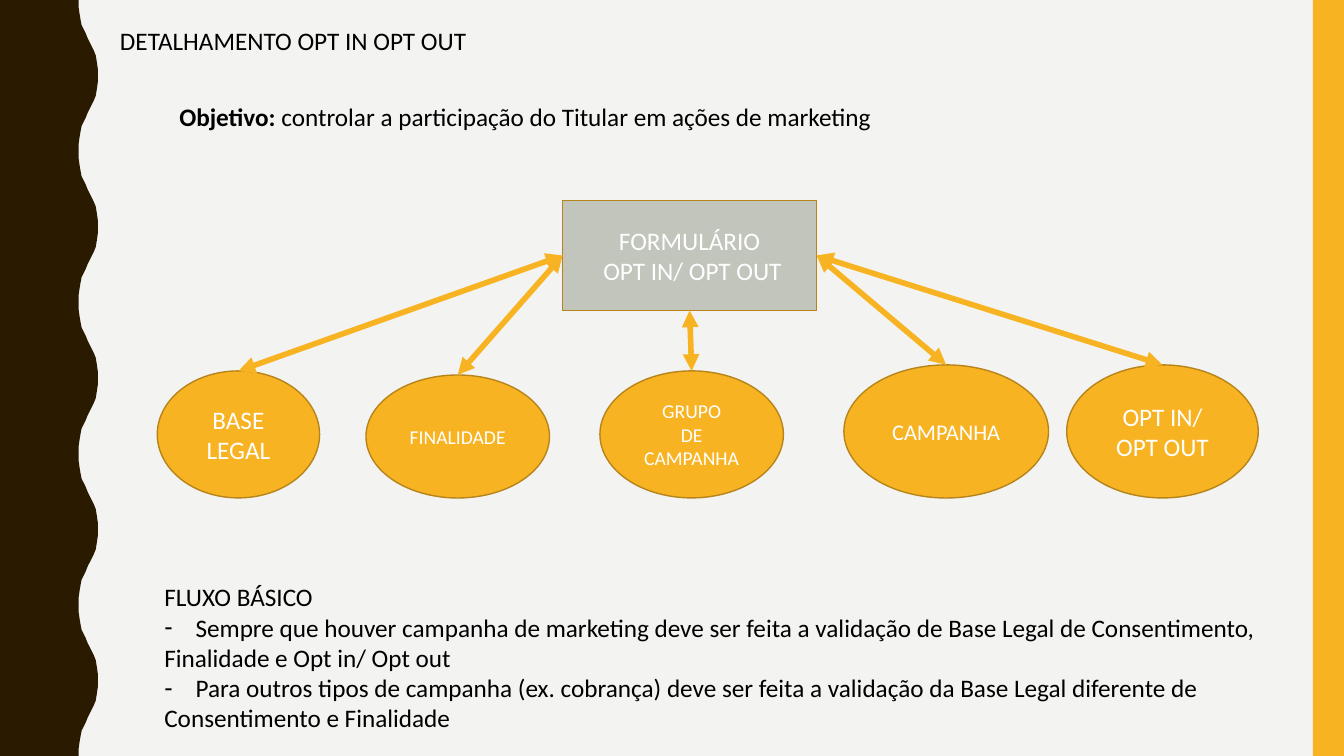
from lxml.etree import SubElement
from pptx import Presentation
from pptx.dml.color import RGBColor
from pptx.enum.shapes import MSO_CONNECTOR, MSO_SHAPE
from pptx.enum.text import MSO_ANCHOR, MSO_AUTO_SIZE, PP_ALIGN
from pptx.oxml.ns import qn
from pptx.util import Inches, Pt

AMBER, BROWN, GREY, OUTLINE = "F8B323", "2A1A00", "C2C5BB", "B7841A"
PAPER, BLACK, WHITE = "F3F3F2", "000000", "FFFFFF"
TOP, LEFT, BOTTOM, RIGHT_OF_BOX = 0, 1, 2, 3
WAVE_PERIOD = 1.5
HALF_WAVE = [
    (0.78, 0), (0.78, 0.07), (0.79, 0.14), (0.8, 0.2), (0.81, 0.25),
    (0.83, 0.29), (0.85, 0.33), (0.87, 0.38), (0.89, 0.42), (0.91, 0.46),
    (0.93, 0.5), (0.95, 0.55), (0.96, 0.61), (0.97, 0.68), (0.97, 0.75),
]
TOPICS = [
    ((1.56, 3.68, 1.61, 1.26), ["BASE LEGAL"], 18, LEFT),
    ((3.63, 3.72, 1.82, 1.22), ["FINALIDADE"], 14, LEFT),
    ((5.95, 3.68, 1.82, 1.26), ["GRUPO", "DE CAMPANHA"], 14, BOTTOM),
    ((8.37, 3.62, 2.03, 1.32), ["CAMPANHA"], 16, RIGHT_OF_BOX),
    ((10.58, 3.62, 1.9, 1.32), ["OPT IN/", "OPT OUT"], 18, RIGHT_OF_BOX),
]
BASIC_FLOW = [
    "FLUXO BÁSICO",
    "- Sempre que houver campanha de marketing deve ser feita a validação de Base Legal de Consentimento,",
    "Finalidade e Opt in/ Opt out",
    "- Para outros tipos de campanha (ex. cobrança) deve ser feita a validação da Base Legal diferente de",
    "Consentimento e Finalidade",
]


def rgb(value):
    """Return the colour for a hex string."""
    return RGBColor.from_string(value)


def place(holder, box):
    """Move a placeholder to a box given in inches."""
    holder.left, holder.top, holder.width, holder.height = map(Inches, box)


def write(holder, lines, size=18, color=BLACK, align=PP_ALIGN.LEFT, anchor=MSO_ANCHOR.TOP):
    """Fill a shape with paragraphs, each a string or a list of (text, bold) runs."""
    frame = holder.text_frame
    frame.word_wrap = True
    frame.auto_size = MSO_AUTO_SIZE.NONE
    frame.vertical_anchor = anchor
    for index, line in enumerate(lines):
        paragraph = frame.add_paragraph() if index else frame.paragraphs[0]
        paragraph.alignment = align
        paragraph.space_before = Pt(0)
        for text, bold in [(line, False)] if isinstance(line, str) else line:
            run = paragraph.add_run()
            run.text = text
            run.font.name = "Calibri"
            run.font.size = Pt(size)
            run.font.bold = bold
            run.font.color.rgb = rgb(color)


def write_list(holder, lines):
    """Write lines, turning a leading dash into a hanging bullet."""
    write(holder, [line.removeprefix("- ") for line in lines])
    for line, paragraph in zip(lines, holder.text_frame.paragraphs):
        properties = paragraph._p.get_or_add_pPr()
        dashed = line.startswith("- ")
        indent = Inches(0.31) if dashed else 0
        properties.set("marL", str(indent))
        properties.set("indent", str(-indent))
        if dashed:
            SubElement(properties, qn("a:buChar"), char="-")
        else:
            SubElement(properties, qn("a:buNone"))


def paint(shape, fill, line=None):
    """Give a shape a flat fill and an optional outline."""
    shape.shadow.inherit = False
    shape.fill.solid()
    shape.fill.fore_color.rgb = rgb(fill)
    if line:
        shape.line.color.rgb = rgb(line)
        shape.line.width = Pt(1)
    else:
        shape.line.fill.background()


def add_block(slide, kind, box, fill, line=None):
    """Add a painted preset shape."""
    block = slide.shapes.add_shape(kind, *map(Inches, box))
    paint(block, fill, line)
    return block


def add_node(slide, kind, box, lines, fill, size=18):
    """Add an outlined shape with centred white text."""
    node = add_block(slide, kind, box, fill, OUTLINE)
    write(node, lines, size=size, color=WHITE, align=PP_ALIGN.CENTER, anchor=MSO_ANCHOR.MIDDLE)
    return node


def add_double_arrow(slide, topic, form, form_site):
    """Link the top of a topic to a side of the form."""
    arrow = slide.shapes.add_connector(MSO_CONNECTOR.STRAIGHT, 0, 0, 0, 0)
    arrow.begin_connect(topic, TOP)
    arrow.end_connect(form, form_site)
    arrow.line.color.rgb = rgb(AMBER)
    arrow.line.width = Pt(4)
    for end in ("a:headEnd", "a:tailEnd"):
        SubElement(arrow.line._get_or_add_ln(), qn(end), type="triangle")
    SubElement(arrow._element.spPr, qn("a:effectLst"))


def add_wavy_edge(slide):
    """Draw the dark band whose right side repeats one wave."""
    wave = HALF_WAVE + [(x, WAVE_PERIOD - y) for x, y in HALF_WAVE[-2::-1]]
    edge = [(x, y + turn * WAVE_PERIOD) for turn in range(5) for x, y in wave]
    builder = slide.shapes.build_freeform(0, 0)
    builder.add_line_segments([(Inches(x), Inches(y)) for x, y in edge + [(0, 7.5)]])
    paint(builder.convert_to_shape(), BROWN)


def main():
    """Build and save the slide."""
    deck = Presentation()
    deck.slide_width, deck.slide_height = Inches(13.33), Inches(7.5)
    slide = deck.slides.add_slide(deck.slide_layouts[1])
    slide.background.fill.solid()
    slide.background.fill.fore_color.rgb = rgb(PAPER)

    add_wavy_edge(slide)
    add_block(slide, MSO_SHAPE.RECTANGLE, (13.02, 0, 0.31, 7.5), AMBER)

    title, flow = slide.placeholders
    place(title, (1.09, 0.2, 4.21, 0.4))
    write(title, ["DETALHAMENTO OPT IN OPT OUT"])
    place(flow, (1.53, 5.72, 11.11, 1.92))
    write_list(flow, BASIC_FLOW)

    goal = slide.shapes.add_textbox(*map(Inches, (1.68, 0.96, 10.96, 0.4)))
    write(goal, [[("Objetivo: ", True),
                  ("controlar a participação do Titular em ações de marketing", False)]])

    form = add_node(slide, MSO_SHAPE.RECTANGLE, (5.58, 1.99, 2.52, 1.09),
                    ["FORMULÁRIO", " OPT IN/ OPT OUT"], GREY)
    for box, lines, size, form_site in TOPICS:
        topic = add_node(slide, MSO_SHAPE.OVAL, box, lines, AMBER, size=size)
        add_double_arrow(slide, topic, form, form_site)

    deck.save("out.pptx")


if __name__ == "__main__":
    main()
